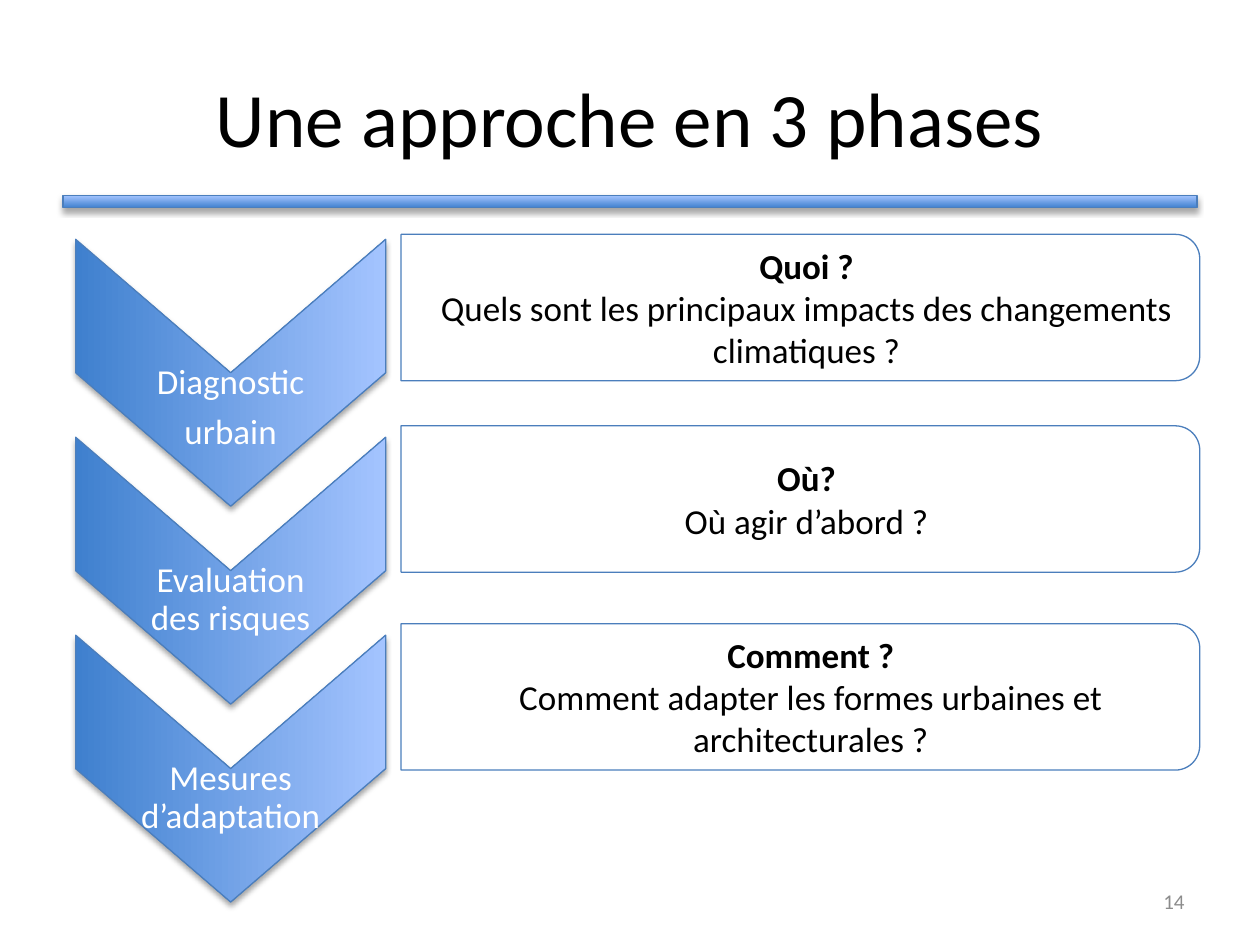
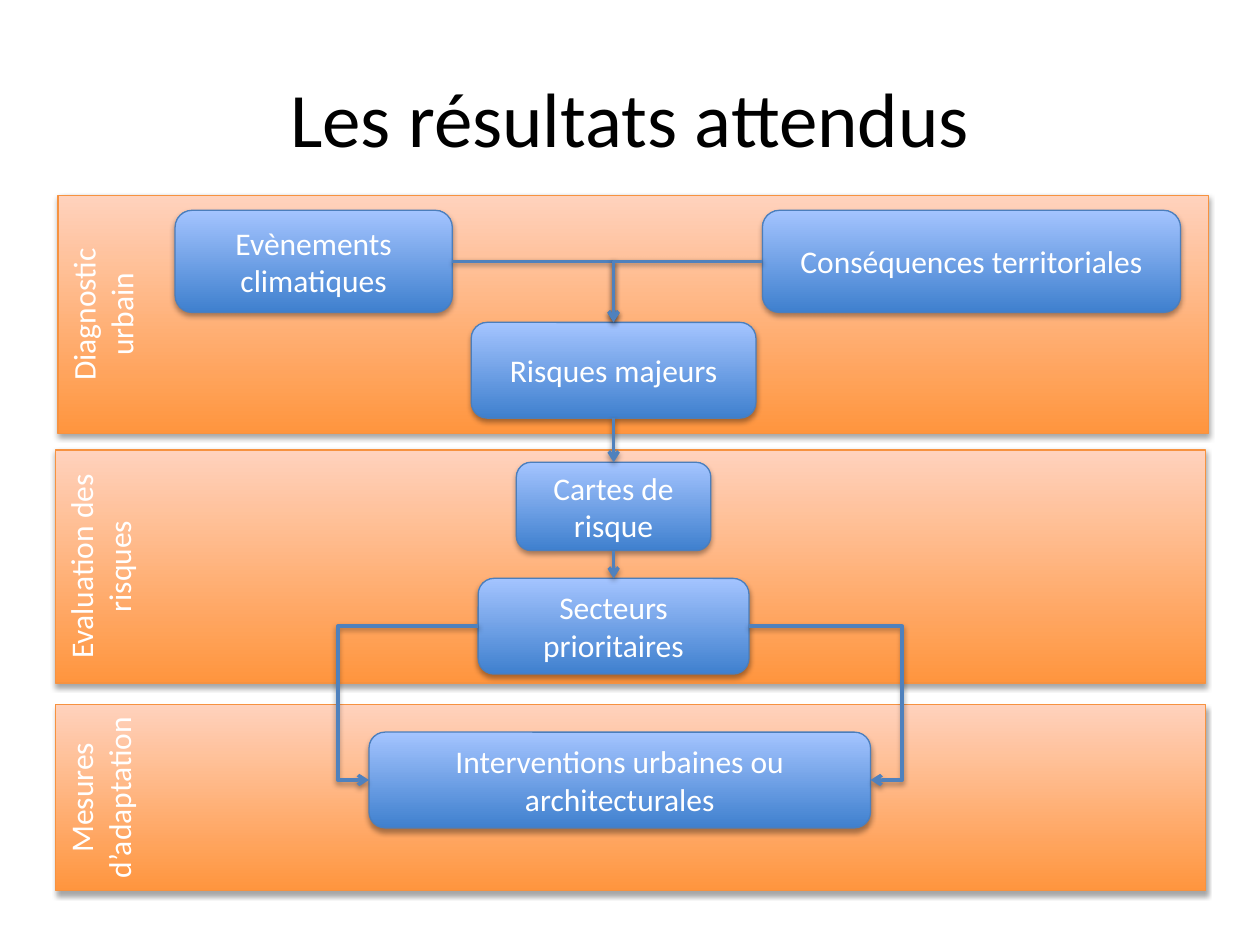
from lxml import etree
from pptx import Presentation
from pptx.dml.color import RGBColor
from pptx.enum.shapes import MSO_CONNECTOR, MSO_SHAPE
from pptx.enum.text import MSO_ANCHOR, PP_ALIGN
from pptx.oxml.ns import qn
from pptx.util import Cm, Pt

RECT, ROUNDED = MSO_SHAPE.RECTANGLE, MSO_SHAPE.ROUNDED_RECTANGLE
CHEVRON, TAB = MSO_SHAPE.CHEVRON, MSO_SHAPE.ROUND_2_SAME_RECTANGLE
STRAIGHT, ELBOW = MSO_CONNECTOR.STRAIGHT, MSO_CONNECTOR.ELBOW
CENTER, RIGHT = PP_ALIGN.CENTER, PP_ALIGN.RIGHT
TOP, MIDDLE = MSO_ANCHOR.TOP, MSO_ANCHOR.MIDDLE
SIDE_TOP, SIDE_BOTTOM = 0, 2

COLORS = {
    "black": "000000", "white": "FFFFFF", "grey": "8C8C8C",
    "blue_dark": "3F80CE", "blue_light": "A4C4FF", "blue_line": "4B7EBC",
    "orange_dark": "FF953E", "orange_light": "FFD2BD", "orange_line": "F69240",
    "arrow": "4F81BD",
}
FONT = "Calibri"


def rgb(name):
    return RGBColor.from_string(COLORS[name])


def add_shadow(effects, distance, alpha):
    """Fill an a:effectLst with a soft shadow that falls straight down."""
    shadow = etree.SubElement(effects, qn("a:outerShdw"), blurRad="40000", dist=str(distance),
                              dir="5400000", rotWithShape="0")
    color = etree.SubElement(shadow, qn("a:srgbClr"), val=COLORS["black"])
    etree.SubElement(color, qn("a:alpha"), val=str(alpha * 1000))


class Deck:
    def __init__(self):
        self.prs = Presentation()
        self.prs.slide_width, self.prs.slide_height = Cm(25.4), Cm(19.05)
        self.s = None

    def slide(self):
        self.s = self.prs.slides.add_slide(self.prs.slide_layouts[6])
        self.shape(RECT, 1.27, 3.94, 22.86, 0.25)

    def title(self, text):
        self.text(text, 1.27, 0.76, 22.86, 3.18, size=44)

    def fill_text(self, tf, paragraphs, size=18, color="white", align=CENTER, anchor=MIDDLE,
                  bold_first=False, **spacing):
        tf.word_wrap = True
        tf.vertical_anchor = anchor
        for i, text in enumerate(paragraphs):
            p = tf.paragraphs[0] if i == 0 else tf.add_paragraph()
            p.text = text
            for name, value in {"alignment": align, **spacing}.items():
                setattr(p, name, value)
            font = {"name": FONT, "size": Pt(size), "bold": bold_first and i == 0}
            for r in p.runs:
                for name, value in font.items():
                    setattr(r.font, name, value)
                r.font.color.rgb = rgb(color)

    def text(self, text, left, top, width, height, color="black", margins=None, **style):
        """Add a text box; each item of a list is a paragraph."""
        tf = self.s.shapes.add_textbox(Cm(left), Cm(top), Cm(width), Cm(height)).text_frame
        for side, value in (margins or {}).items():
            setattr(tf, f"margin_{side}", Cm(value))
        self.fill_text(tf, [text] if isinstance(text, str) else text, color=color, **style)

    def shape(self, kind, left, top, width, height, hue="blue", rotation=0, raised=True):
        """Add a shape: raised ones have a gradient and a shadow, others are plain white."""
        sp = self.s.shapes.add_shape(kind, Cm(left), Cm(top), Cm(width), Cm(height))
        sp.rotation = rotation
        sp.shadow.inherit = False
        sp.line.color.rgb = rgb(f"{hue}_line")
        sp.line.width = Pt(0.75)
        if raised:
            sp.fill.gradient()
            sp.fill.gradient_angle = 90
            for stop, tone in zip(sp.fill.gradient_stops, ("dark", "light")):
                stop.color.rgb = rgb(f"{hue}_{tone}")
            add_shadow(sp._element.spPr.find(qn("a:effectLst")), 23000, 35)
        else:
            sp.fill.solid()
            sp.fill.fore_color.rgb = rgb("white")
        return sp

    def box(self, text, left, top, width, height):
        sp = self.shape(ROUNDED, left, top, width, height)
        self.fill_text(sp.text_frame, [text])
        return sp

    def band(self, text, left, top, height):
        """Add an orange band with its name turned along the left edge."""
        sp = self.shape(RECT, left, top, 23.19, height, hue="orange")
        self.fill_text(sp.text_frame, [text], anchor=TOP)
        sp.text_frame._txBody.bodyPr.set("vert", "vert270")

    def arrow(self, kind, start, end):
        c = self.s.shapes.add_connector(kind, *start, *end)
        c.line.color.rgb = rgb("arrow")
        c.line.width = Pt(2)
        etree.SubElement(c.line._get_or_add_ln(), qn("a:tailEnd"), type="arrow")
        add_shadow(etree.SubElement(c._element.spPr, qn("a:effectLst")), 20000, 38)
        return c

    def arrow_down(self, upper, lower):
        c = self.arrow(STRAIGHT, (0, 0), (0, 0))
        c.begin_connect(upper, SIDE_BOTTOM)
        c.end_connect(lower, SIDE_TOP)

    def arrow_corner(self, start, end):
        """Go sideways, then down, with a single bend."""
        geometry = self.arrow(ELBOW, start, end)._element.spPr.find(qn("a:prstGeom"))
        geometry.set("prst", "bentConnector2")

    def arrow_around(self, start, end, bend):
        """Go out to the x position bend, down, and back in."""
        geometry = self.arrow(ELBOW, start, end)._element.spPr.find(qn("a:prstGeom"))
        guides = geometry.find(qn("a:avLst"))
        if guides is None:
            guides = etree.SubElement(geometry, qn("a:avLst"))
        ratio = (Cm(bend) - start[0]) / (end[0] - start[0])
        etree.SubElement(guides, qn("a:gd"), name="adj1", fmla=f"val {round(ratio * 100000)}")


def left_mid(sp):
    return sp.left, sp.top + sp.height // 2


def right_mid(sp):
    return sp.left + sp.width, sp.top + sp.height // 2


def top_mid(sp):
    return sp.left + sp.width // 2, sp.top


def phases_slide(deck):
    deck.slide()
    deck.title("Une approche en 3 phases")
    deck.text("14", 18.21, 17.65, 5.92, 1.02, size=12, color="grey", align=RIGHT)
    thin = dict.fromkeys(("left", "top", "right", "bottom"), 0.03)
    # phase name, question, answer, middle of the panel, left and width of its text
    phases = [
        (["Diagnostic", "urbain"], "Quoi ?",
         "Quels sont les principaux impacts des changements climatiques ?", 6.2, 8.08, 15.98),
        (["Evaluation\ndes risques"], "Où?", "Où agir d’abord ?", 10.06, 8.08, 15.98),
        (["Mesures d’adaptation"], "Comment ?",
         "Comment adapter les formes urbaines et architecturales ?", 14.05, 9.68, 12.95),
    ]
    for i, (name, question, answer, middle, left, width) in enumerate(phases):
        deck.shape(CHEVRON, 1.96, 4.39 + 3.99 * i, 5.38, 6.25, rotation=90)
        deck.text(name, 1.96, middle + 1.22, 5.38, 1.63, size=20, color="white", margins=thin,
                  line_spacing=0.9, space_after=Pt(7))
        deck.shape(TAB, 14.66, middle - 8.05, 2.95, 16.1, rotation=90, raised=False)
        deck.text([question, answer], left, middle - 1.32, width, 2.64, size=20,
                  margins={**thin, "left": 0.41}, bold_first=True)


def results_slide(deck):
    deck.slide()
    deck.band("Mesures d’adaptation", 1.12, 14.2, 3.76)
    deck.band("Evaluation des risques", 1.12, 9.07, 4.7)
    deck.band("Diagnostic urbain", 1.17, 3.94, 4.8)
    deck.title("Les résultats attendus")

    events = deck.box("Evènements climatiques", 3.53, 4.24, 5.59, 2.06)
    effects = deck.box("Conséquences territoriales", 15.37, 4.24, 8.43, 2.06)
    risks = deck.box("Risques majeurs", 9.5, 6.5, 5.74, 1.93)
    maps = deck.box("Cartes de risque", 10.41, 9.32, 3.92, 1.78)
    sectors = deck.box("Secteurs prioritaires", 9.64, 11.66, 5.46, 1.93)
    actions = deck.box("Interventions urbaines ou architecturales", 7.44, 14.76, 10.11, 1.93)

    deck.arrow_corner(right_mid(events), top_mid(risks))
    deck.arrow_corner(left_mid(effects), top_mid(risks))
    deck.arrow_down(risks, maps)
    deck.arrow_down(maps, sectors)
    deck.arrow_around(left_mid(sectors), left_mid(actions), 6.81)
    deck.arrow_around(right_mid(sectors), right_mid(actions), 18.19)


def main():
    deck = Deck()
    phases_slide(deck)
    results_slide(deck)
    deck.prs.save("out.pptx")


if __name__ == "__main__":
    main()
